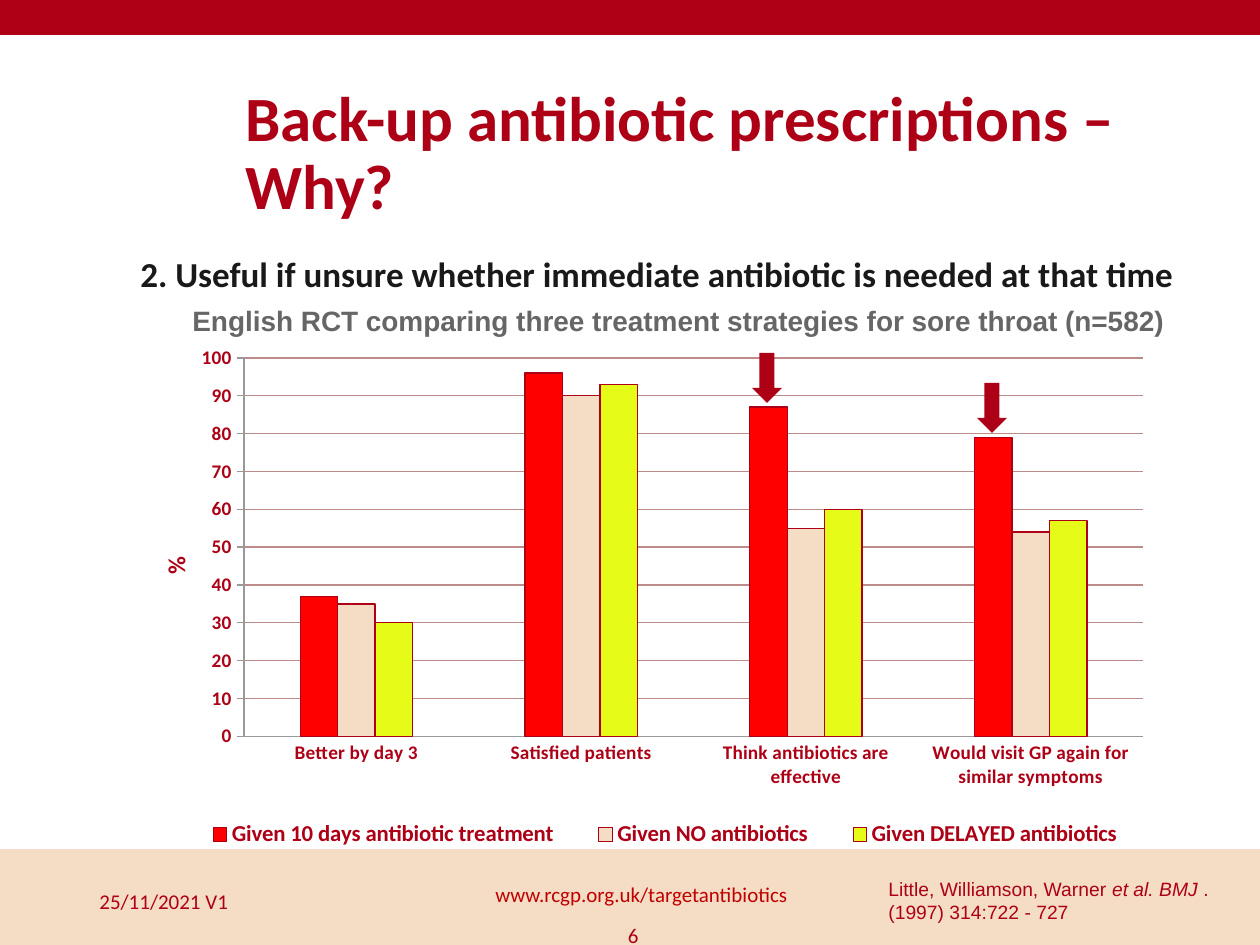
import pptx
import pptx.util
import pptx.chart.data
from pptx.dml.color import RGBColor
from pptx.enum.chart import XL_CHART_TYPE, XL_LEGEND_POSITION, XL_TICK_MARK
from pptx.enum.shapes import MSO_SHAPE
from pptx.enum.text import MSO_ANCHOR, PP_ALIGN
from lxml import etree

RED = RGBColor(0xAD, 0x00, 0x16)
LINK_RED = RGBColor(0xC0, 0x00, 0x00)
SAND = RGBColor(0xF4, 0xDD, 0xC4)
BRIGHT_RED = RGBColor(0xFF, 0x00, 0x00)
LIME = RGBColor(0xE6, 0xFC, 0x18)
GREY = RGBColor(0x66, 0x66, 0x66)
AXIS_GREY = RGBColor(0x99, 0x99, 0x99)
GRID = RGBColor(0xBE, 0x8B, 0x8B)
INK = RGBColor(0x19, 0x19, 0x19)
WHITE = RGBColor(0xFF, 0xFF, 0xFF)
PX = 914400 / 126
Pt = pptx.util.Pt


def emu(*lengths):
    return [round(n * PX) for n in lengths]


def place(parent, index, **fractions):
    """Give a chart part a manual layout, in fractions of the chart."""
    ns = parent.nsmap["c"]
    for old in parent.findall(f"{{{ns}}}layout"):
        parent.remove(old)
    layout = etree.Element(f"{{{ns}}}layout")
    manual = etree.SubElement(layout, f"{{{ns}}}manualLayout")
    for tag, val in fractions.items():
        etree.SubElement(manual, f"{{{ns}}}{tag}").set("val", str(val))
    parent.insert(index, layout)


prs = pptx.Presentation()
prs.slide_width, prs.slide_height = emu(1260, 945)
s = prs.slides.add_slide(prs.slide_layouts[6])

# Top and bottom bands
for box, color in [((0, -1, 1260, 36), RED), ((0, 849, 1260, 96), SAND)]:
    sp = s.shapes.add_shape(MSO_SHAPE.RECTANGLE, *emu(*box))
    sp.shadow.inherit = False
    sp.fill.solid()
    sp.fill.fore_color.rgb = color
    sp.line.fill.background()

# Chart
data = pptx.chart.data.CategoryChartData()
data.categories = ["Better by day 3", "Satisfied patients",
                   "Think antibiotics are effective",
                   "Would visit GP again for similar symptoms"]
series = [("Given 10 days antibiotic treatment", (37, 96, 87, 79), BRIGHT_RED),
          ("Given NO antibiotics", (35, 90, 55, 54), SAND),
          ("Given DELAYED antibiotics", (30, 93, 60, 57), LIME)]
for name, values, _ in series:
    data.add_series(name, values)
chart = s.shapes.add_chart(XL_CHART_TYPE.COLUMN_CLUSTERED,
                           *emu(144, 339, 1042, 576), data).chart
chart.has_title = False
chart.has_legend = True
legend = chart.legend
legend.position = XL_LEGEND_POSITION.BOTTOM
legend.include_in_layout = False
cat, val = chart.category_axis, chart.value_axis
plot = chart.plots[0]
plot.gap_width = 300
plot.overlap = 0
plot.vary_by_categories = False
for ser, (_, _, color) in zip(plot.series, series):
    ser.format.fill.solid()
    ser.format.fill.fore_color.rgb = color
    ser.format.line.color.rgb = RED
    ser.format.line.width = Pt(0.75)

# Axes, gridlines and chart type
cat.major_tick_mark = XL_TICK_MARK.NONE
val.major_tick_mark = XL_TICK_MARK.OUTSIDE
for name, value in {"minimum_scale": 0, "maximum_scale": 100, "major_unit": 10,
                    "has_major_gridlines": True, "has_title": True}.items():
    setattr(val, name, value)
val.axis_title.text_frame.text = "%"
title_run = val.axis_title.text_frame.paragraphs[0].runs[0]
for line, color in [(cat.format.line, AXIS_GREY), (val.format.line, AXIS_GREY),
                    (val.major_gridlines.format.line, GRID)]:
    line.color.rgb = color
    line.width = Pt(0.75)
for font, size in [(chart.font, 10), (cat.tick_labels.font, 11),
                   (val.tick_labels.font, 11), (legend.font, 13),
                   (title_run.font, 14)]:
    for name, value in {"name": "Calibri", "size": Pt(size), "bold": True}.items():
        setattr(font, name, value)
    font.color.rgb = RED

# Places of plot, legend and axis title
plot_area = chart.plots[0]._element.getparent()
place(plot_area, 0, layoutTarget="inner", xMode="edge", yMode="edge",
      x=0.096, y=0.033, w=0.863, h=0.657)
place(legend._element, 1, xMode="edge", yMode="edge", x=0.03, y=0.83, w=0.94, h=0.06)
place(val.axis_title._element, 1, xMode="edge", yMode="edge", x=0.01, y=0.37)

# Arrows over the columns
for x, y in [(752, 353), (977, 383)]:
    sp = s.shapes.add_shape(MSO_SHAPE.DOWN_ARROW, *emu(x, y, 30, 50))
    sp.shadow.inherit = False
    sp.fill.solid()
    sp.fill.fore_color.rgb = RED
    sp.line.fill.background()

# Texts: box, runs (text, italic), size, font, colour, bold, anchor, paragraph format
TOP, MID = MSO_ANCHOR.TOP, MSO_ANCHOR.MIDDLE
RIGHT = {"alignment": PP_ALIGN.RIGHT}
texts = [
    ((876, 871, 384, 59),
     [("Little, Williamson, Warner ", False), ("et al. BMJ", True),
      (" . (1997) 314:722 - 727", False)], 11, "Arial", RED, False, TOP, {}),
    ((180, 297, 1002, 47),
     [("English RCT comparing three treatment strategies for sore throat (n=582)", False)],
     16, "Arial", GREY, True, TOP, {}),
    ((233, 76, 1007, 158), [("Back-up antibiotic prescriptions – Why?", False)],
     36, "Calibri", RED, True, MID, {"line_spacing": 0.9}),
    ((128, 251, 1132, 84),
     [("2. Useful if unsure whether immediate antibiotic is needed at that time", False)],
     20, "Calibri", INK, True, TOP, {"line_spacing": 0.9}),
    ((461, 869, 339, 50), [("www.rcgp.org.uk/targetantibiotics", False)],
     12, "Calibri", LINK_RED, False, MID, RIGHT),
    ((368, 910, 283, 50), [("6", False)], 12, "Calibri", RED, False, MID, RIGHT),
    ((87, 876, 283, 50), [("25/11/2021 V1", False)],
     12, "Calibri", RED, False, MID, {}),
]
for box, runs, size, face, color, bold, anchor, para in texts:
    tf = s.shapes.add_textbox(*emu(*box)).text_frame
    tf.word_wrap = True
    tf.vertical_anchor = anchor
    p = tf.paragraphs[0]
    for name, value in para.items():
        setattr(p, name, value)
    for text, italic in runs:
        r = p.add_run()
        r.text = text
        for name, value in {"name": face, "size": Pt(size), "bold": bold,
                            "italic": italic}.items():
            setattr(r.font, name, value)
        r.font.color.rgb = color

prs.save("out.pptx")
